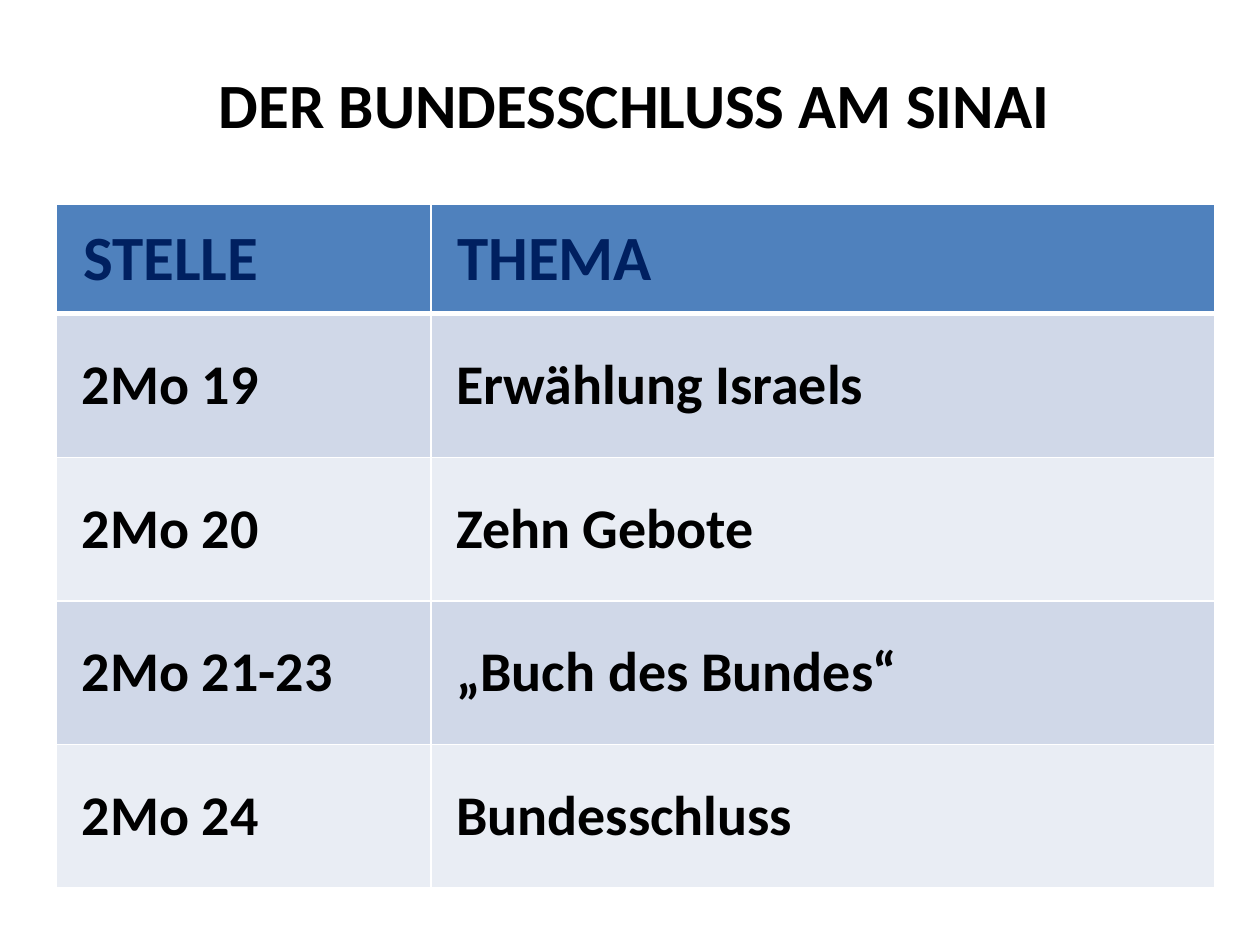
from dataclasses import dataclass

from lxml.etree import SubElement
from pptx import Presentation
from pptx.dml.color import RGBColor as RGB
from pptx.enum.text import MSO_ANCHOR as Anchor, MSO_AUTO_SIZE as AutoSize, PP_ALIGN as Align
from pptx.oxml import parse_xml
from pptx.oxml.ns import nsdecls, qn
from pptx.util import Inches, Pt


@dataclass(frozen=True)
class Theme:
    font: str = "Calibri"
    heading: int = 36
    body: int = 32
    text: str = "000000"
    header_text: str = "002060"
    header_fill: str = "4F81BD"
    bands: tuple = ("D0D8E8", "E9EDF4")
    white: str = "FFFFFF"


theme = Theme()


def style(p, size, color):
    p.font.name = theme.font
    p.font.size = Pt(size)
    p.font.bold = True
    p.font.color.rgb = RGB.from_string(color)


def add_border(cell, side, width):
    cell._tc.get_or_add_tcPr().append(parse_xml(
        f'<a:{side} {nsdecls("a")} w="{Pt(width)}"><a:solidFill>'
        f'<a:srgbClr val="{theme.white}"/></a:solidFill></a:{side}>'))


prs = Presentation()
prs.slide_width, prs.slide_height = Inches(10), Inches(7.5)
s = prs.slides.add_slide(prs.slide_layouts[5])

title = s.shapes.title
title.left, title.top = Inches(0.43), Inches(0.44)
title.width, title.height = Inches(9.21), Inches(0.63)
title.fill.solid()
title.fill.fore_color.rgb = RGB.from_string(theme.white)
color = title._element.spPr.find(qn("a:solidFill"))[0]
SubElement(color, qn("a:alpha"), val="60000")
tf = title.text_frame
tf.auto_size = AutoSize.NONE
tf.vertical_anchor = Anchor.TOP
tf.margin_top = Inches(0.08)
tf.text = "DER BUNDESSCHLUSS AM SINAI"
p = tf.paragraphs[0]
p.alignment = Align.CENTER
style(p, theme.heading, theme.text)

rows = [
    ("STELLE", "THEMA"),
    ("2Mo 19", "Erwählung Israels"),
    ("2Mo 20", "Zehn Gebote"),
    ("2Mo 21-23", "„Buch des Bundes“"),
    ("2Mo 24", "Bundesschluss"),
]
frame = s.shapes.add_table(len(rows), 2, Inches(0.45), Inches(1.62), Inches(9.19), Inches(5.43))
table = frame.table
for column, width in zip(table.columns, (2.97, 6.22)):
    column.width = Inches(width)

for i, row in enumerate(rows):
    header = i == 0
    table.rows[i].height = Inches(0.87 if header else 1.14)
    fill = theme.header_fill if header else theme.bands[(i - 1) % 2]
    for j, text in enumerate(row):
        cell = table.cell(i, j)
        cell.text = text
        cell.vertical_anchor = Anchor.MIDDLE
        cell.margin_left = Inches(0.21 if header else 0.2)
        for side in ("lnL", "lnR", "lnT", "lnB"):
            thick = (i, side) in ((0, "lnB"), (1, "lnT"))
            add_border(cell, side, 3 if thick else 1)
        cell.fill.solid()
        cell.fill.fore_color.rgb = RGB.from_string(fill)
        style(cell.text_frame.paragraphs[0],
              theme.heading if header else theme.body,
              theme.header_text if header else theme.text)

prs.save("out.pptx")
